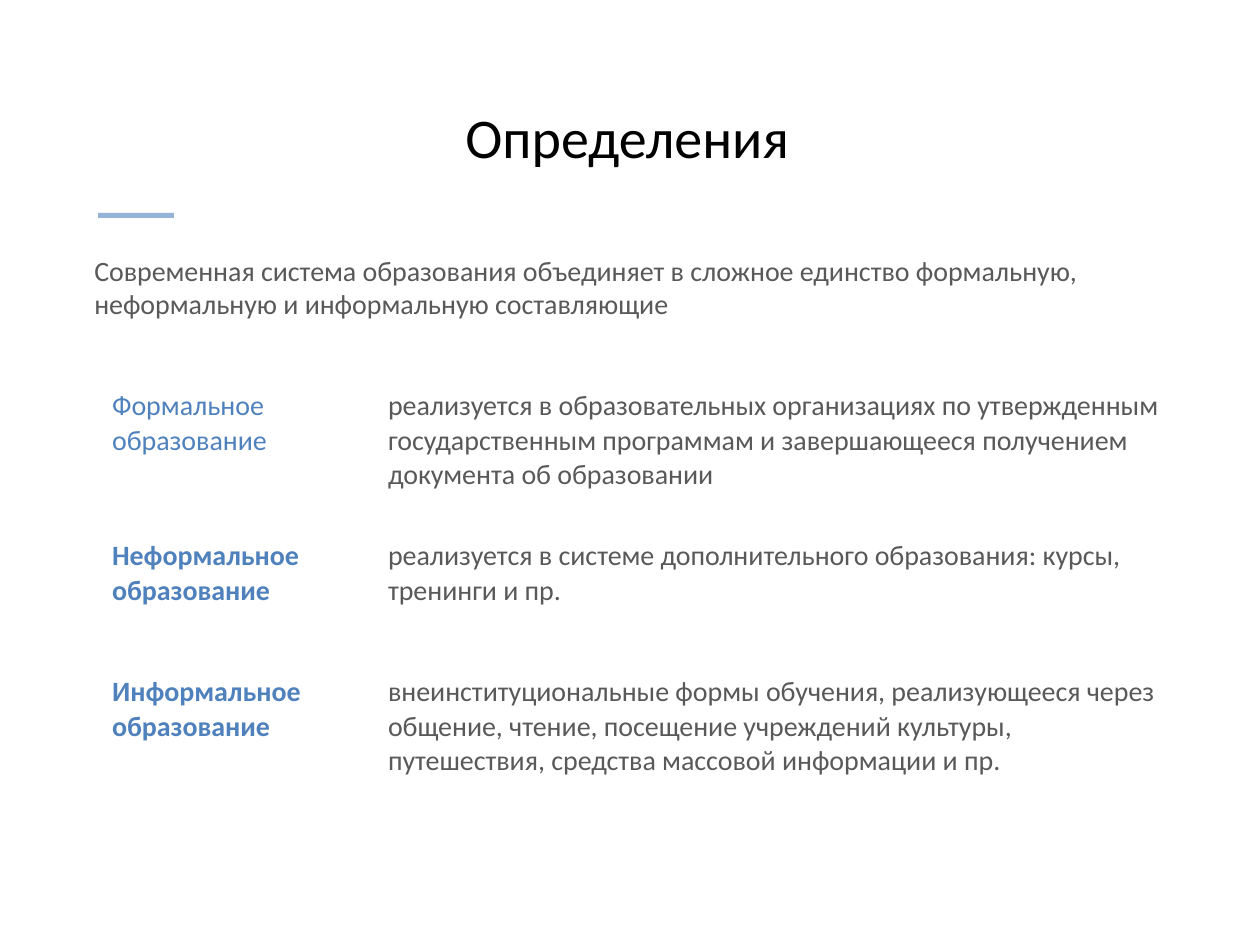
import pptx
import pptx.util
import pptx.dml.color
import pptx.enum.shapes
import pptx.enum.text

Inches = pptx.util.Inches
Align = pptx.enum.text.PP_ALIGN
Anchor = pptx.enum.text.MSO_ANCHOR

BLACK, GREY, BLUE, PALE, WHITE = "000000", "595959", "4F81BD", "95B3D7", "FFFFFF"


def color(code):
    return pptx.dml.color.RGBColor.from_string(code)


class Deck:
    """Holds the style and the current slide."""

    font = "Calibri"
    size = 16

    def __init__(self, wide, high):
        self.file = pptx.Presentation()
        self.file.slide_width = Inches(wide)
        self.file.slide_height = Inches(high)
        self.slide = self.file.slides.add_slide(self.file.slide_layouts[6])

    def add_run(self, frame, text, ink, size=None, bold=False, align=Align.LEFT):
        """Add one styled run to the first paragraph of a frame."""
        frame.word_wrap = True
        para = frame.paragraphs[0]
        para.alignment = align
        run = para.add_run()
        run.text = text
        run.font.name = self.font
        run.font.size = pptx.util.Pt(size or self.size)
        run.font.bold = bold
        run.font.color.rgb = color(ink)

    def text(self, place, text, ink, anchor=Anchor.TOP, foot=0.05, **style):
        frame = self.slide.shapes.add_textbox(*map(Inches, place)).text_frame
        frame.vertical_anchor = anchor
        frame.margin_bottom = Inches(foot)
        self.add_run(frame, text, ink, **style)

    def bar(self, place, fill):
        kind = pptx.enum.shapes.MSO_SHAPE.RECTANGLE
        shape = self.slide.shapes.add_shape(kind, *map(Inches, place))
        shape.shadow.inherit = False
        shape.fill.solid()
        shape.fill.fore_color.rgb = color(fill)
        shape.line.fill.background()

    def table(self, left, top, cols, rows, terms):
        """Draw a table of (term, meaning, bold term) entries."""
        place = map(Inches, (left, top, sum(cols), sum(rows)))
        table = self.slide.shapes.add_table(len(rows), len(cols), *place).table
        table.first_row = table.horz_banding = False
        for col, width in zip(table.columns, cols):
            col.width = Inches(width)
        for row, height, (term, meaning, bold) in zip(table.rows, rows, terms):
            row.height = Inches(height)
            styles = (term, BLUE, bold), (meaning, GREY, False)
            for cell, (text, ink, heavy) in zip(row.cells, styles):
                cell.fill.solid()
                cell.fill.fore_color.rgb = color(WHITE)
                cell.margin_left = cell.margin_right = Inches(0.09)
                cell.margin_top = cell.margin_bottom = Inches(0.04)
                self.add_run(cell.text_frame, text, ink, bold=heavy)


TERMS = [
    ("Формальное образование",
     "реализуется в образовательных организациях по утвержденным "
     "государственным программам и завершающееся получением "
     "документа об образовании", False),
    ("Неформальное образование",
     "реализуется в системе дополнительного образования: курсы, "
     "тренинги и пр.", True),
    ("Информальное образование",
     "внеинституциональные формы обучения, реализующееся через "
     "общение, чтение, посещение учреждений культуры, "
     "путешествия, средства массовой информации и пр.", True),
]


def main():
    deck = Deck(10, 7.5)
    deck.text((0.65, 1.96, 8.66, 0.73),
              "Современная система образования объединяет в сложное единство "
              "формальную, неформальную и информальную составляющие", GREY)
    deck.text((0.65, 0.13, 8.66, 1.24), "Определения", BLACK,
              anchor=Anchor.BOTTOM, foot=0.02, size=32, align=Align.CENTER)
    deck.bar((0.78, 1.69, 0.6, 0.04), PALE)
    deck.table(0.8, 3.05, (2.19, 6.32), (1.19, 1.08, 1.19), TERMS)
    deck.file.save("out.pptx")


if __name__ == "__main__":
    main()
